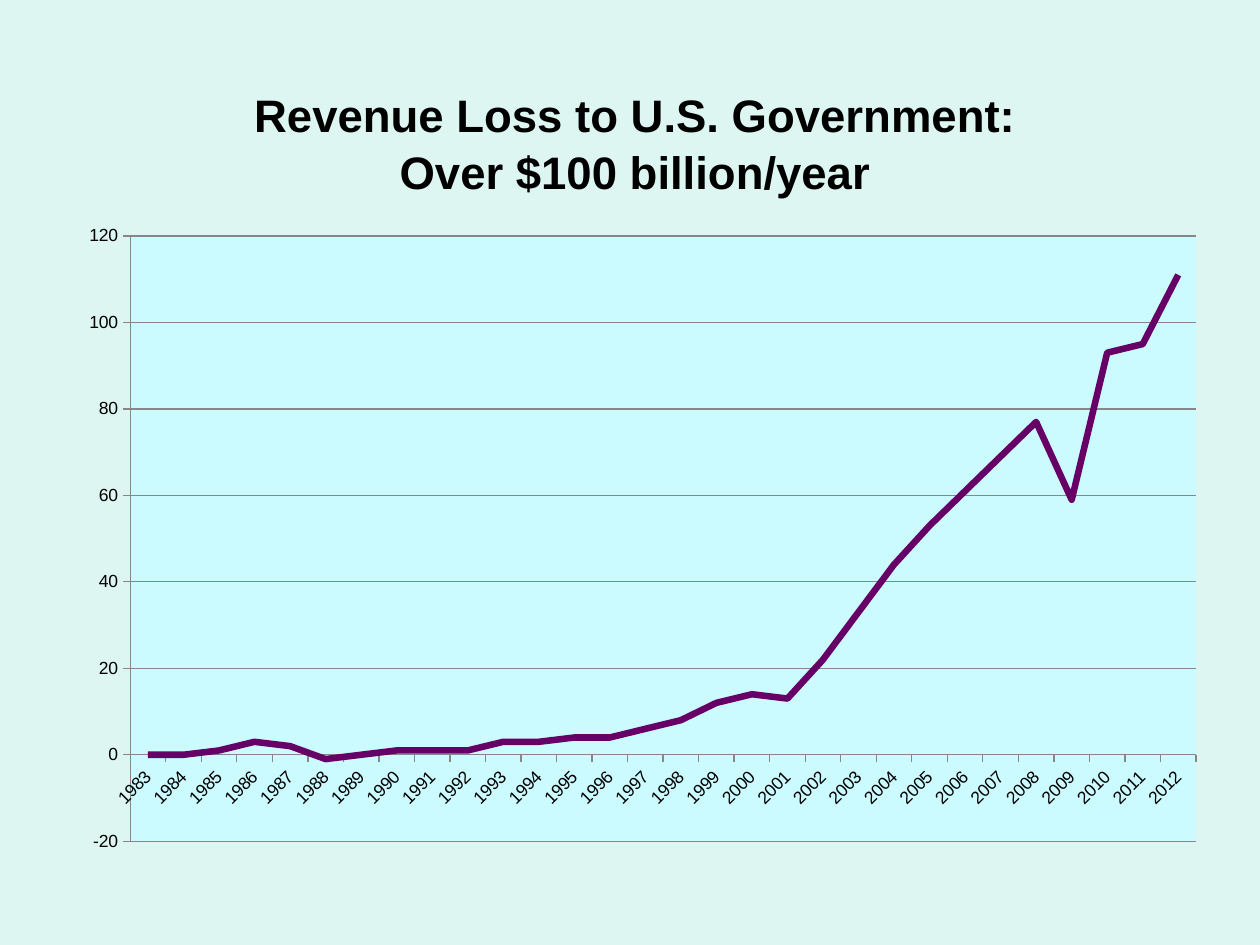
from dataclasses import dataclass

from lxml.etree import SubElement
from pptx import Presentation
from pptx.chart.chart import Chart
from pptx.chart.data import CategoryChartData
from pptx.dml.color import RGBColor
from pptx.enum.chart import XL_CHART_TYPE, XL_TICK_MARK
from pptx.enum.text import MSO_ANCHOR, PP_ALIGN
from pptx.oxml import parse_xml
from pptx.oxml.ns import nsdecls, qn
from pptx.util import Pt

MINT = RGBColor(0xDE, 0xF6, 0xF1)
CYAN = RGBColor(0xCB, 0xFA, 0xFF)
PURPLE = RGBColor(0x66, 0x00, 0x66)
GRAY = RGBColor(0x87, 0x87, 0x87)
BLACK = RGBColor(0, 0, 0)
FONT = "Arial"

FIRST_YEAR = 1983
LOSSES = [0, 0, 1, 3, 2, -1, 0, 1, 1, 1, 3, 3, 4, 4, 6,
          8, 12, 14, 13, 22, 33, 44, 53, 61, 69, 77, 59, 93, 95, 111]


@dataclass
class Box:
    left: float
    top: float
    width: float
    height: float

    def points(self) -> tuple:
        return Pt(self.left), Pt(self.top), Pt(self.width), Pt(self.height)


TITLE_BOX = Box(66, 48, 594, 66)
CHART_BOX = Box(42, 120, 648, 372)
PLOT_SHARE = {"x": 0.05, "y": 0.04, "w": 0.94, "h": 0.93}


def add_title(s, text: str) -> None:
    sp = s.shapes.title
    sp.left, sp.top, sp.width, sp.height = TITLE_BOX.points()
    tf = sp.text_frame
    tf.text = text
    tf.word_wrap = True
    tf.vertical_anchor = MSO_ANCHOR.MIDDLE
    p = tf.paragraphs[0]
    p.alignment = PP_ALIGN.CENTER
    p.line_spacing = 1.05
    p.font.name, p.font.size, p.font.bold = FONT, Pt(26), True
    p.font.color.rgb = BLACK


def format_plot_area(chart: Chart) -> None:
    """Fix the inner plot area and fill it, which needs XML."""
    plot_area = chart._chartSpace.chart.plotArea
    for old in plot_area.findall(qn("c:layout")):
        plot_area.remove(old)
    layout = parse_xml(f"<c:layout {nsdecls('c')}><c:manualLayout/></c:layout>")
    manual = layout[0]
    SubElement(manual, qn("c:layoutTarget")).set("val", "inner")
    for side in "xy":
        SubElement(manual, qn(f"c:{side}Mode")).set("val", "edge")
    for side, share in PLOT_SHARE.items():
        SubElement(manual, qn(f"c:{side}")).set("val", str(share))
    plot_area.insert(0, layout)
    plot_area.append(parse_xml(
        f'<c:spPr {nsdecls("c", "a")}><a:solidFill><a:srgbClr val="{CYAN}"/>'
        "</a:solidFill><a:ln><a:noFill/></a:ln></c:spPr>"))


def format_axes(chart: Chart) -> None:
    years, amounts = chart.category_axis, chart.value_axis
    for axis in (years, amounts):
        axis.major_tick_mark = XL_TICK_MARK.OUTSIDE
        axis.minor_tick_mark = XL_TICK_MARK.NONE
        axis.format.line.color.rgb = GRAY
        axis.format.line.width = Pt(0.75)
    years.tick_labels.font.size = Pt(10)
    years._element.txPr.bodyPr.set("rot", str(-45 * 60000))
    amounts.minimum_scale, amounts.maximum_scale = -20, 120
    amounts.major_unit = 20
    amounts.has_major_gridlines = True
    grid = amounts.major_gridlines.format.line
    grid.color.rgb, grid.width = GRAY, Pt(0.75)


def add_loss_chart(s) -> None:
    data = CategoryChartData()
    data.categories = [str(FIRST_YEAR + i) for i in range(len(LOSSES))]
    data.add_series("Series 1", LOSSES)
    chart = s.shapes.add_chart(XL_CHART_TYPE.LINE, *CHART_BOX.points(), data).chart
    chart.has_legend = chart.has_title = False
    chart.font.name, chart.font.size = FONT, Pt(10)
    chart.font.color.rgb = BLACK
    plot = chart.plots[0]
    plot.vary_by_categories = False
    line = plot.series[0]
    line.smooth = False
    line.format.line.color.rgb, line.format.line.width = PURPLE, Pt(3.75)
    format_axes(chart)
    format_plot_area(chart)


def main() -> None:
    prs = Presentation()
    prs.slide_width, prs.slide_height = Pt(720), Pt(540)
    s = prs.slides.add_slide(prs.slide_layouts[5])  # title only
    s.background.fill.solid()
    s.background.fill.fore_color.rgb = MINT
    add_title(s, "Revenue Loss to U.S. Government:\vOver $100 billion/year")
    add_loss_chart(s)
    prs.save("out.pptx")


if __name__ == "__main__":
    main()
